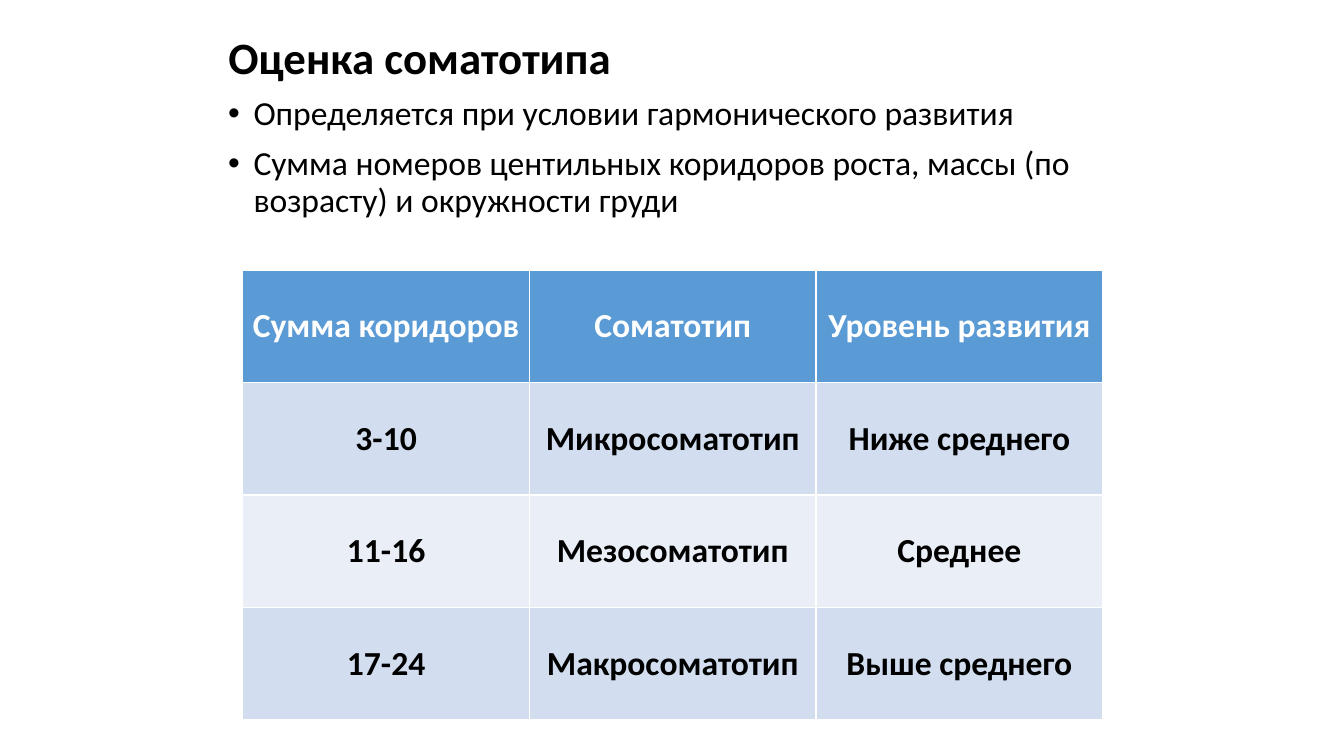
from lxml.etree import SubElement
from pptx import Presentation
from pptx.dml.color import RGBColor
from pptx.enum.text import MSO_ANCHOR, MSO_AUTO_SIZE, PP_ALIGN
from pptx.oxml.ns import qn
from pptx.util import Cm, Pt

BLACK = RGBColor(0x00, 0x00, 0x00)
WHITE = RGBColor(0xFF, 0xFF, 0xFF)
HEADER_BLUE = RGBColor(0x5B, 0x9B, 0xD5)
BAND_DARK = RGBColor(0xD2, 0xDE, 0xEF)
BAND_LIGHT = RGBColor(0xEA, 0xEF, 0xF7)

TITLE = "Оценка соматотипа"
CONDITIONS = [
    "Определяется при условии гармонического развития",
    "Сумма номеров центильных коридоров роста, массы (по возрасту) и окружности груди",
]
SOMATOTYPES = [
    ["Сумма коридоров", "Соматотип", "Уровень развития"],
    ["3-10", "Микросоматотип", "Ниже среднего"],
    ["11-16", "Мезосоматотип", "Среднее"],
    ["17-24", "Макросоматотип", "Выше среднего"],
]

# Boxes: left, top, width, height in centimetres
TITLE_BOX = (5.5, -0.08, 22.86, 3.18)
CONDITIONS_BOX = (5.5, 2.31, 22.86, 12.57)
TABLE_BOX = (6.12, 6.81, 21.67, 11.33)


def set_attributes(target, values):
    for name, value in values.items():
        setattr(target, name, value)


def format_font(paragraph, size, color, bold=False):
    set_attributes(paragraph.font, {"name": "Calibri", "size": Pt(size), "bold": bold})
    paragraph.font.color.rgb = color


def add_bullet(paragraph):
    properties = paragraph._p.get_or_add_pPr()
    properties.set("marL", str(Cm(0.64)))
    properties.set("indent", str(-Cm(0.64)))
    SubElement(properties, qn("a:buFont"), typeface="Arial")
    SubElement(properties, qn("a:buChar"), char="•")


def add_borders(cell, color, width):
    properties = cell._tc.get_or_add_tcPr()
    for side in ("lnL", "lnR", "lnT", "lnB"):
        line = SubElement(properties, qn(f"a:{side}"), w=str(Pt(width)))
        fill = SubElement(line, qn("a:solidFill"))
        SubElement(fill, qn("a:srgbClr"), val=str(color))


def place_title(slide, box):
    left, top, width, height = map(Cm, box)
    title = slide.shapes.title
    set_attributes(title, {"left": left, "top": top, "width": width, "height": height})
    frame = title.text_frame
    set_attributes(frame, {
        "text": TITLE,
        "word_wrap": True,
        "auto_size": MSO_AUTO_SIZE.NONE,
        "vertical_anchor": MSO_ANCHOR.MIDDLE,
    })
    paragraph = frame.paragraphs[0]
    set_attributes(paragraph, {"alignment": PP_ALIGN.LEFT, "line_spacing": 0.9})
    format_font(paragraph, 32, BLACK, bold=True)


def place_conditions(slide, box):
    frame = slide.shapes.add_textbox(*map(Cm, box)).text_frame
    frame.word_wrap = True
    for index, text in enumerate(CONDITIONS):
        paragraph = frame.add_paragraph() if index else frame.paragraphs[0]
        set_attributes(paragraph, {
            "text": text,
            "line_spacing": 0.9,
            "space_before": Pt(10 if index else 0),
        })
        add_bullet(paragraph)
        format_font(paragraph, 24, BLACK)


def place_table(slide, box):
    rows, columns = len(SOMATOTYPES), len(SOMATOTYPES[0])
    table = slide.shapes.add_table(rows, columns, *map(Cm, box)).table
    for row, texts in enumerate(SOMATOTYPES):
        # Header row, then alternating bands
        if row == 0:
            fill_color, text_color = HEADER_BLUE, WHITE
        else:
            fill_color, text_color = (BAND_DARK if row % 2 else BAND_LIGHT), BLACK
        for column, text in enumerate(texts):
            cell = table.cell(row, column)
            set_attributes(cell, {"text": text, "vertical_anchor": MSO_ANCHOR.MIDDLE})
            add_borders(cell, WHITE, 1)
            cell.fill.solid()
            cell.fill.fore_color.rgb = fill_color
            paragraph = cell.text_frame.paragraphs[0]
            paragraph.alignment = PP_ALIGN.CENTER
            format_font(paragraph, 24, text_color, bold=True)


def main():
    presentation = Presentation()
    set_attributes(presentation, {"slide_width": Cm(33.87), "slide_height": Cm(19.05)})
    slide = presentation.slides.add_slide(presentation.slide_layouts.get_by_name("Title Only"))
    place_title(slide, TITLE_BOX)
    place_conditions(slide, CONDITIONS_BOX)
    place_table(slide, TABLE_BOX)
    presentation.save("out.pptx")


if __name__ == "__main__":
    main()
